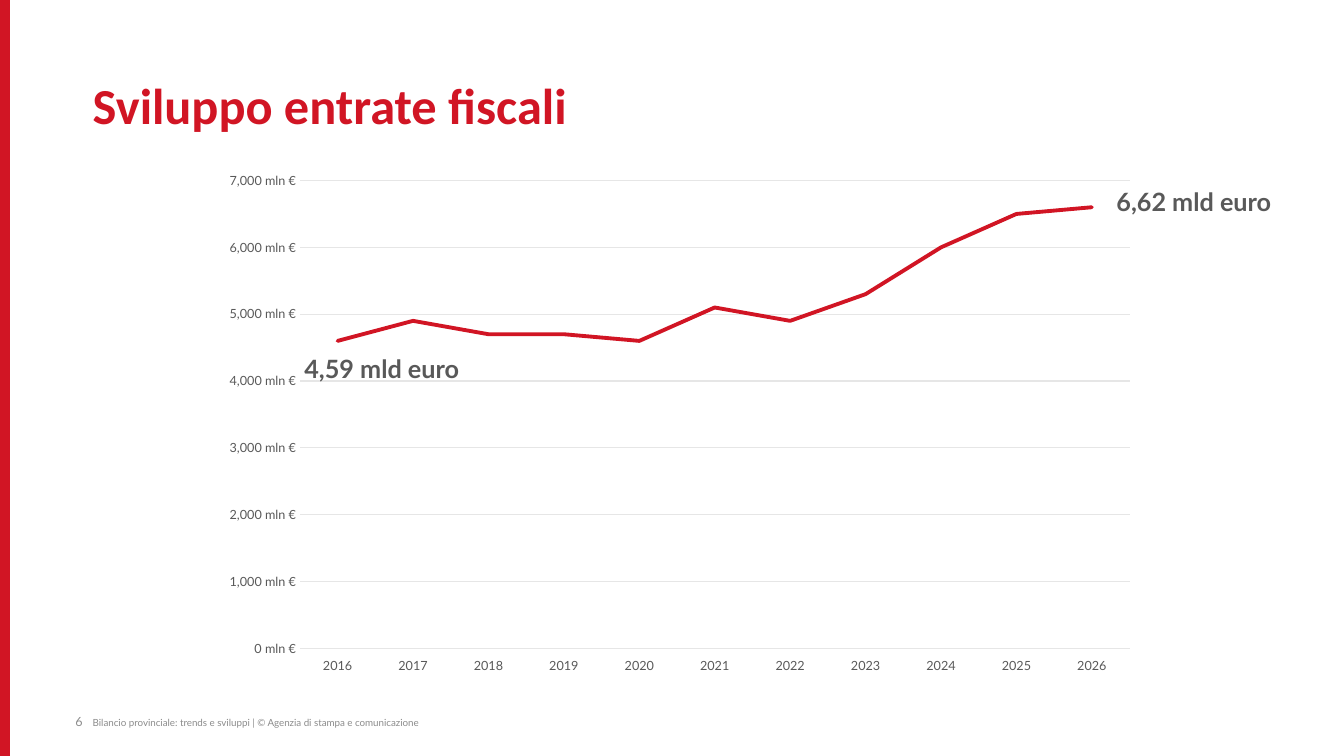
from lxml import etree
from pptx import Presentation
from pptx.chart.data import CategoryChartData
from pptx.dml.color import RGBColor
from pptx.enum.chart import XL_CHART_TYPE, XL_TICK_LABEL_POSITION, XL_TICK_MARK
from pptx.enum.shapes import MSO_CONNECTOR
from pptx.enum.text import MSO_AUTO_SIZE, PP_ALIGN
from pptx.oxml import parse_xml
from pptx.oxml.ns import nsdecls, qn
from pptx.util import Inches, Pt

LINE_CHART = XL_CHART_TYPE.LINE
LOW = XL_TICK_LABEL_POSITION.LOW
NO_TICK = XL_TICK_MARK.NONE
STRAIGHT = MSO_CONNECTOR.STRAIGHT
GROW = MSO_AUTO_SIZE.SHAPE_TO_FIT_TEXT
LEFT, RIGHT = PP_ALIGN.LEFT, PP_ALIGN.RIGHT

COLORS = {"red": "D11524", "text": "595959", "footer": "8C8C8C", "grid": "E6E6E6", "paper": "FFFFFF"}
HEADING_FONT, BODY_FONT = "Calibri", "Lato"
MILLION = 1_000_000
REVENUE = {
    "2016": 4600, "2017": 4900, "2018": 4700, "2019": 4700, "2020": 4600, "2021": 5100,
    "2022": 4900, "2023": 5300, "2024": 6000, "2025": 6500, "2026": 6600,
}
PLOT_PERCENT = {"x": 9.5, "y": 3.5, "w": 88.4, "h": 89.6}


class SlideBuilder:
    """Draws styled elements on one slide, placed in percent of its size."""

    def __init__(self, deck):
        self.deck = deck
        self.page = deck.slides.add_slide(deck.slide_layouts[6])
        background = self.page.background.fill
        background.solid()
        background.fore_color.rgb = self.color("paper")

    def color(self, name):
        return RGBColor.from_string(COLORS[name])

    def place(self, left, top, width, height):
        across, down = self.deck.slide_width / 100, self.deck.slide_height / 100
        return int(left * across), int(top * down), int(width * across), int(height * down)

    def style_font(self, font, size, color="text", name=BODY_FONT, bold=False):
        font.size, font.name, font.bold = Pt(size), name, bold
        font.color.rgb = self.color(color)

    def style_line(self, line, color, width):
        line.color.rgb = self.color(color)
        line.width = Pt(width)

    def stripe(self, center, width):
        x, top, _, bottom = self.place(center, 0, 0, 100)
        stripe = self.page.shapes.add_connector(STRAIGHT, x, top, x, bottom)
        self.style_line(stripe.line, "red", width)
        etree.SubElement(stripe._element.spPr, qn("a:effectLst"))

    def text(self, words, area, size, align=LEFT, spacing=None, **font):
        frame = self.page.shapes.add_textbox(*self.place(*area)).text_frame
        frame.word_wrap = True
        frame.margin_left = frame.margin_right = frame.margin_top = frame.margin_bottom = 0
        para = frame.paragraphs[0]
        para.text, para.alignment = words, align
        if spacing:
            para.line_spacing = spacing
        self.style_font(para.font, size, **font)
        return frame

    def callout(self, words, left, top):
        frame = self.text(words, (left, top, 13.8, 5.33), 18, bold=True)
        frame.margin_left = frame.margin_right = Inches(0.1)
        frame.margin_top = frame.margin_bottom = Inches(0.05)
        frame.word_wrap = False
        frame.auto_size = GROW

    def line_chart(self, area, values, name):
        data = CategoryChartData()
        data.categories = list(values)
        data.add_series(name, [value * MILLION for value in values.values()])
        chart = self.page.shapes.add_chart(LINE_CHART, *self.place(*area), data).chart
        chart.has_legend = chart.has_title = False
        self.style_font(chart.font, 10)
        for axis in (chart.category_axis, chart.value_axis):
            axis.major_tick_mark = axis.minor_tick_mark = NO_TICK
            self.style_font(axis.tick_labels.font, 9)
        chart.category_axis.tick_label_position = LOW
        self.style_line(chart.category_axis.format.line, "grid", 0.75)
        scale = chart.value_axis
        scale.minimum_scale, scale.maximum_scale, scale.major_unit = 0, 7000 * MILLION, 1000 * MILLION
        scale.format.line.fill.background()
        scale.tick_labels.number_format = '#,##0,,\\ "mln €"'
        scale.tick_labels.number_format_is_linked = False
        self.style_line(scale.major_gridlines.format.line, "grid", 0.75)
        plot = chart.plots[0]
        plot.vary_by_categories = False
        series = plot.series[0]
        series.smooth = False
        self.style_line(series.format.line, "red", 2.75)
        series.format.line._get_or_add_ln().set("cap", "rnd")
        self.fix_plot(chart)

    def fix_plot(self, chart):
        modes = '<c:layoutTarget val="inner"/><c:xMode val="edge"/><c:yMode val="edge"/>'
        shares = "".join(f'<c:{key} val="{percent / 100:.3f}"/>' for key, percent in PLOT_PERCENT.items())
        layout = parse_xml(
            f'<c:layout {nsdecls("c")}><c:manualLayout>{modes}{shares}</c:manualLayout></c:layout>'
        )
        plot_area = chart._chartSpace.chart.plotArea
        for old in plot_area.findall(qn("c:layout")):
            plot_area.remove(old)
        plot_area.insert(0, layout)


def main():
    deck = Presentation()
    deck.slide_width, deck.slide_height = Inches(13.33), Inches(7.5)
    slide = SlideBuilder(deck)
    slide.stripe(0.38, 7.5)
    slide.text("Sviluppo entrate fiscali", (6.9, 10.67, 86.27, 14), 36,
               spacing=0.9, color="red", name=HEADING_FONT, bold=True)
    slide.text("Bilancio provinciale: trends e sviluppi | © Agenzia di stampa e comunicazione",
               (6.9, 94.8, 40.44, 1.33), 7, color="footer")
    slide.text("6", (1.8, 94.4, 4.35, 2), 9, align=RIGHT, color="footer")
    slide.line_chart((15.68, 21.47, 69.84, 69.07), REVENUE, "Series 1")
    slide.callout("6,62 mld euro", 82.33, 24)
    slide.callout("4,59 mld euro", 21.91, 46.1)
    deck.save("out.pptx")


if __name__ == "__main__":
    main()
